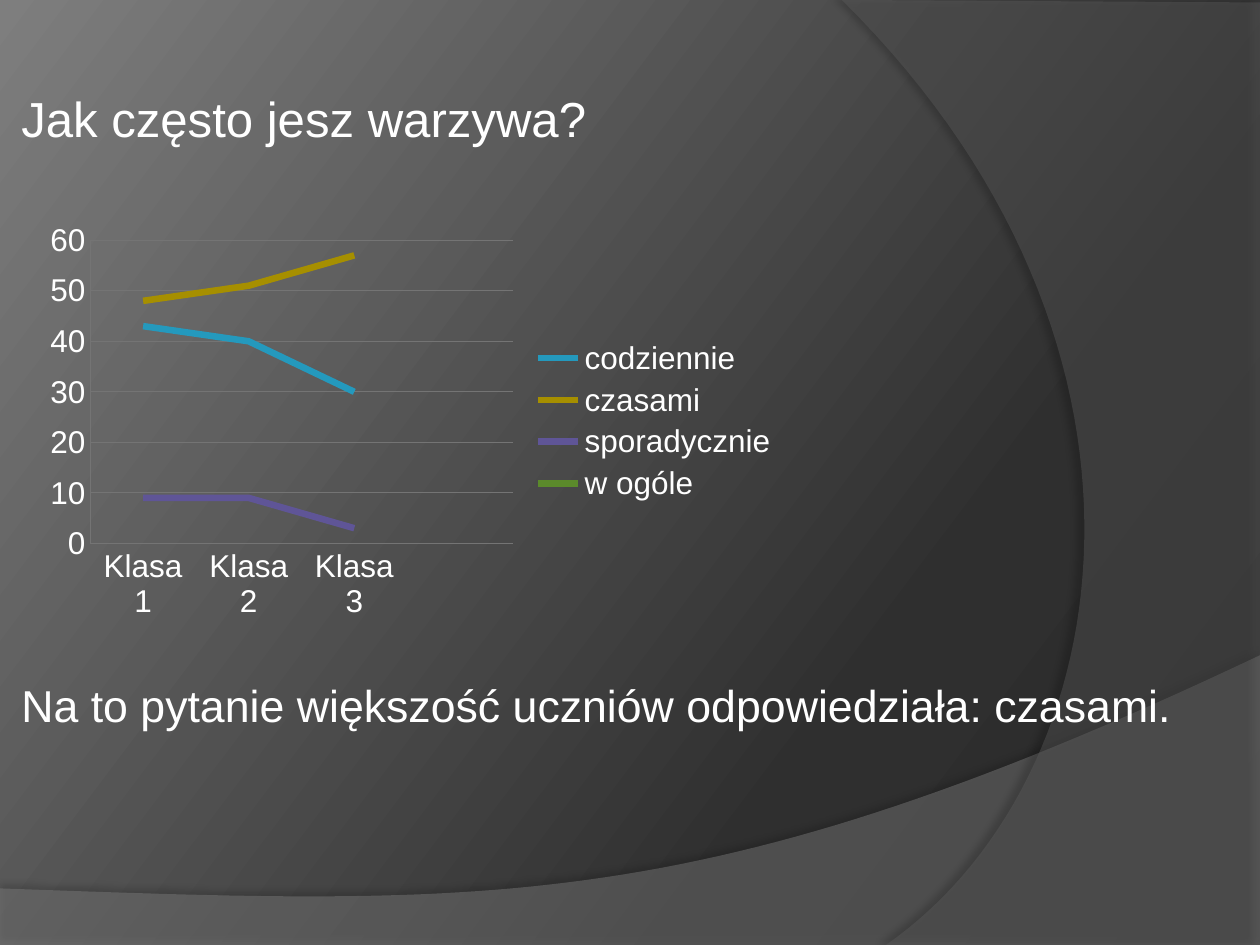
from copy import deepcopy

from lxml.etree import SubElement
from pptx import Presentation
from pptx.chart.data import CategoryChartData
from pptx.dml.color import RGBColor
from pptx.enum.chart import XL_CHART_TYPE as ChartType, XL_LEGEND_POSITION as LegendPos
from pptx.enum.chart import XL_MARKER_STYLE as Marker, XL_TICK_MARK as Tick
from pptx.oxml.ns import qn
from pptx.util import Cm, Pt

FONT = "Arial"
COLORS = {
    "text": "FFFFFF", "grid": "747474", "shadow": "000000",
    "wave": "7F7F7F", "arc": "5E5E5E",
    "bg_dark": "282828", "bg_mid": "2F2F2F", "bg_light": "7E7E7E",
}
CATEGORIES = ["Klasa 1", "Klasa 2", "Klasa 3", ""]
SERIES = [
    ("codziennie", "2499BD", [43, 40, 30, None]),
    ("czasami", "A68F00", [48, 51, 57, None]),
    ("sporadycznie", "5F5597", [9, 9, 3, None]),
    ("w ogóle", "5B8A2B", [None] * 4),
]


def rgb(name):
    return RGBColor.from_string(COLORS[name])


def set_background(s):
    fill = s.background.fill
    fill.gradient()
    fill.gradient_angle = 143
    stop_list = next(s._element.iter(qn("a:gsLst")))
    stop_list.append(deepcopy(stop_list[-1]))
    stops = [(0, "bg_dark"), (0.3, "bg_mid"), (1, "bg_light")]
    for stop, (position, color) in zip(fill.gradient_stops, stops):
        stop.position = position
        stop.color.rgb = rgb(color)


def bezier(p0, p1, p2, p3, steps=60):
    """Points along a cubic curve, both ends included."""
    points = []
    for i in range(steps + 1):
        t = i / steps
        weights = ((1 - t) ** 3, 3 * t * (1 - t) ** 2, 3 * t * t * (1 - t), t ** 3)
        points.append(tuple(sum(w * p[axis] for w, p in zip(weights, (p0, p1, p2, p3)))
                            for axis in (0, 1)))
    return points


def set_alpha(color_el, percent):
    SubElement(color_el, qn("a:alpha"), val=str(percent * 1000))


def add_swoosh(s, points, color, alpha, shadow_alpha, distance, angle):
    """Translucent outline with a soft shadow; points are in centimetres."""
    emu = [(Cm(x), Cm(y)) for x, y in points]
    builder = s.shapes.build_freeform(*emu[0])
    builder.add_line_segments(emu[1:], close=True)
    sp = builder.convert_to_shape()
    sp.fill.solid()
    sp.fill.fore_color.rgb = rgb(color)
    set_alpha(next(sp._element.spPr.iter(qn("a:srgbClr"))), alpha)
    sp.line.fill.background()
    sp.shadow.inherit = False
    effects = sp._element.spPr.find(qn("a:effectLst"))
    shadow = SubElement(effects, qn("a:outerShdw"), blurRad=str(Pt(4)),
                        dist=str(Pt(distance)), dir=str(angle * 60000),
                        algn="ctr", rotWithShape="0")
    set_alpha(SubElement(shadow, qn("a:srgbClr"), val=COLORS["shadow"]), shadow_alpha)


def add_text(s, text, top, size, color="text"):
    tf = s.shapes.add_textbox(Cm(0.3), Cm(top), Cm(24.6), Cm(1.2)).text_frame
    tf.word_wrap = True
    tf.margin_left = tf.margin_right = Cm(0.13)
    tf.margin_top = tf.margin_bottom = 0
    r = tf.paragraphs[0].add_run()
    r.text = text
    r.font.name, r.font.size = FONT, Pt(size)
    r.font.color.rgb = rgb(color)


def style_line(line, color, width):
    line.color.rgb = color
    line.width = Pt(width)


def add_line_chart(s):
    data = CategoryChartData()
    data.categories = CATEGORIES
    for name, _, values in SERIES:
        data.add_series(name, values)
    chart = s.shapes.add_chart(ChartType.LINE, Cm(0.71), Cm(4.32),
                               Cm(15.24), Cm(8.33), data).chart
    chart.has_title = False
    chart.font.name, chart.font.size = FONT, Pt(18)
    chart.font.color.rgb = rgb("text")
    chart.has_legend = True
    chart.legend.position = LegendPos.RIGHT
    chart.legend.include_in_layout = False
    for axis in (chart.category_axis, chart.value_axis):
        axis.major_tick_mark = axis.minor_tick_mark = Tick.NONE
        style_line(axis.format.line, rgb("grid"), 0.75)
    value_axis = chart.value_axis
    value_axis.minimum_scale, value_axis.maximum_scale = 0, 60
    value_axis.major_unit = 10
    value_axis.has_major_gridlines = True
    style_line(value_axis.major_gridlines.format.line, rgb("grid"), 0.75)
    chart.plots[0].vary_by_categories = False
    for series, (_, color, _) in zip(chart.plots[0].series, SERIES):
        series.smooth = False
        series.marker.style = Marker.NONE
        style_line(series.format.line, RGBColor.from_string(color), 3.75)


def main():
    prs = Presentation()
    prs.slide_width, prs.slide_height = Cm(25.4), Cm(19.05)
    s = prs.slides.add_slide(prs.slide_layouts[6])
    set_background(s)
    wave = [(0, 19.08), (25.4, 19.08)]
    wave += bezier((25.4, 13.21), (14.2, 18.52), (9.93, 18.26), (0, 17.91))
    add_swoosh(s, wave, "wave", 45, shadow_alpha=35, distance=3.5, angle=270)
    arc = [(25.4, 0.05), (25.4, 19.05)]
    arc += bezier((17.86, 19.05), (22.63, 15.72), (24.05, 6.99), (16.97, 0))
    add_swoosh(s, arc, "arc", 40, shadow_alpha=45, distance=4, angle=180)
    add_text(s, "Jak często jesz warzywa?", top=1.78, size=28.1)
    add_text(s, "Na to pytanie większość uczniów odpowiedziała: czasami.", top=13.66, size=25.5)
    add_line_chart(s)
    prs.save("out.pptx")


if __name__ == "__main__":
    main()
